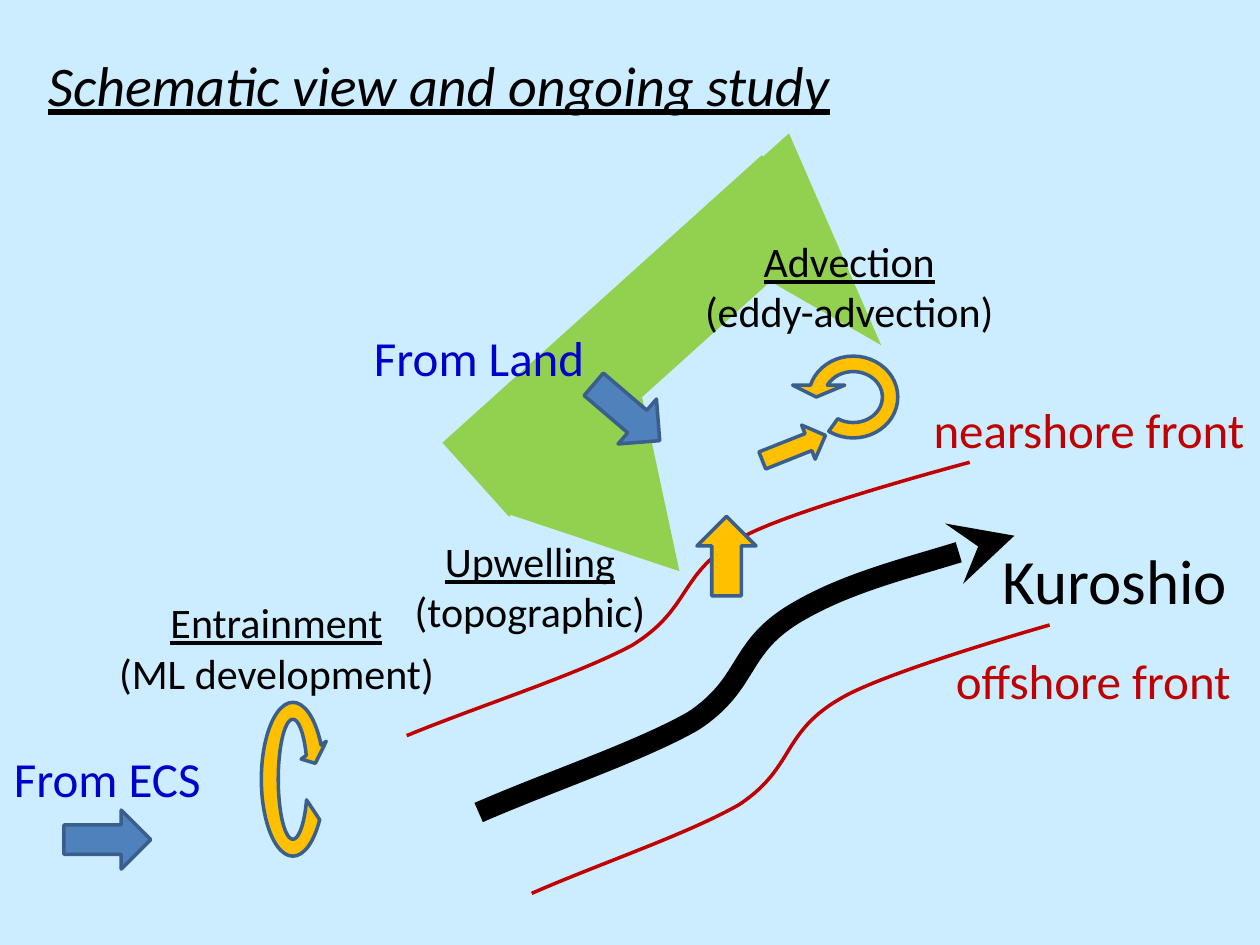
"""Build a slide with a schematic view of the Kuroshio and its nutrient sources."""
import pptx
import pptx.dml.color
import pptx.enum.shapes
import pptx.enum.text
import pptx.oxml.ns
import pptx.oxml.xmlchemy
import pptx.util
from pptx.util import Cm

KIND = pptx.enum.shapes.MSO_SHAPE
ALIGN = pptx.enum.text.PP_ALIGN
BLACK, RED, BLUE = "000000", "C00000", "0000CC"
GREEN, GOLD, STEEL, OUTLINE = "92D050", "FFC000", "4F81BD", "3A5F8C"

TITLE = "Schematic view and ongoing study"
TITLE_BOX = (0.71, 0.89, 16.46, 1.63)

FLOW = [(0, 0), (0.13, 0.11), (0.3, 0.22), (0.4, 0.33), (0.51, 0.47),
        (0.48, 0.6), (0.6, 0.73), (0.69, 0.83), (1, 1), (1, 1)]
CURRENTS = [
    ((8.2, 9.32, 11.35, 5.51), RED, 2, None),
    ((10.72, 12.6, 10.44, 5.41), RED, 2, None),
    ((9.65, 10.8, 10.8, 5.58), BLACK, 12, "stealth"),
]

COAST = [
    (KIND.ISOSCELES_TRIANGLE, (10.82, 8.74, 3.63, 3.18), 138.2),
    (KIND.RECTANGLE, (8.48, 5.77, 8.66, 2.01), 318),
    (KIND.ISOSCELES_TRIANGLE, (14.83, 3.1, 2.92, 4.42), 138.2),
]

ARROWS = [
    (KIND.DOWN_ARROW, (14.05, 10.41, 1.19, 1.6), 180, GOLD),
    (KIND.RIGHT_ARROW, (15.32, 8.66, 1.37, 0.74), 338.3, GOLD),
    (KIND.DOWN_ARROW, (12.04, 7.44, 1.19, 1.75), 310.5, STEEL),
    (KIND.DOWN_ARROW, (1.57, 16.05, 1.19, 1.75), 270, STEEL),
]
EDDIES = [
    ((5.13, 14.02, 1.55, 3.38), (0.22, 11.42, 183.39, 33.87, 0.2), False),
    ((15.93, 6.81, 2.54, 2.39), (0.13, 11.42, 204.58, 32.73, 0.22), True),
]

NAMES = [
    ("Kuroshio", (19.96, 10.8, 5.08, 1.8), 36, BLACK),
    ("nearshore front", (18.57, 7.92, 6.86, 1.45), 28, RED),
    ("offshore front", (19.02, 12.98, 6.12, 1.45), 28, RED),
    ("From ECS", (0.03, 14.96, 4.32, 1.45), 28, BLUE),
    ("From Land", (7.29, 6.48, 4.8, 1.45), 28, BLUE),
]
PROCESSES = [
    ("Entrainment", "(ML development)", (2.11, 11.91, 6.93, 2.31)),
    ("Upwelling", "(topographic)", (8.08, 10.67, 5.21, 2.31)),
    ("Advection", "(eddy-advection)", (13.92, 4.62, 6.4, 2.31)),
]


def paint(color_format, color):
    color_format.rgb = pptx.dml.color.RGBColor.from_string(color)


def write(holder, *lines, size, color=BLACK, align=ALIGN.LEFT, italic=False, underline_first=False):
    frame = holder.text_frame
    frame.text = "\n".join(lines)
    frame.word_wrap = False
    frame.auto_size = pptx.enum.text.MSO_AUTO_SIZE.SHAPE_TO_FIT_TEXT
    frame.vertical_anchor = pptx.enum.text.MSO_ANCHOR.TOP
    for position, paragraph in enumerate(frame.paragraphs):
        paragraph.alignment = align
        font = paragraph.runs[0].font
        font.name, font.size, font.italic = "Calibri", pptx.util.Pt(size), italic
        font.underline = underline_first and position == 0
        paint(font.color, color)


def add_label(slide, box, *lines, **style):
    write(slide.shapes.add_textbox(*map(Cm, box)), *lines, **style)


def add_block(slide, kind, box, fill, rotation=0, outline=None):
    block = slide.shapes.add_shape(kind, *map(Cm, box))
    block.shadow.inherit = False
    block.rotation = rotation
    block.fill.solid()
    paint(block.fill.fore_color, fill)
    if outline:
        paint(block.line.color, outline)
        block.line.width = pptx.util.Pt(2)
    else:
        block.line.fill.background()
    return block


def add_current(slide, box, color, width, head):
    left, top, across, rise = box
    points = [(Cm(left + x * across), Cm(top + (1 - y) * rise)) for x, y in FLOW]
    builder = slide.shapes.build_freeform(*points[0])
    builder.add_line_segments(points[1:], close=False)
    current = builder.convert_to_shape()
    current.shadow.inherit = False
    current.fill.background()
    paint(current.line.color, color)
    current.line.width = pptx.util.Pt(width)

    qn = pptx.oxml.ns.qn
    new_element = pptx.oxml.xmlchemy.OxmlElement
    route = current.element.find(".//" + qn("a:path"))
    steps = route.findall(qn("a:lnTo"))
    for start in range(0, len(steps), 3):
        bend = new_element("a:cubicBezTo")
        for step in steps[start:start + 3]:
            bend.append(step[0])
            route.remove(step)
        route.append(bend)
    if head:
        tip = new_element("a:tailEnd")
        tip.set("type", head)
        current.element.spPr.find(qn("a:ln")).append(tip)


def main():
    deck = pptx.Presentation()
    deck.slide_width, deck.slide_height = Cm(25.4), Cm(19.05)
    slide = deck.slides.add_slide(deck.slide_layouts[5])
    slide.background.fill.solid()
    paint(slide.background.fill.fore_color, "CCECFF")

    title = slide.shapes.title
    title.left, title.top, title.width, title.height = map(Cm, TITLE_BOX)
    write(title, TITLE, size=32, italic=True, underline_first=True)

    for current in CURRENTS:
        add_current(slide, *current)
    for kind, box, rotation in COAST:
        add_block(slide, kind, box, GREEN, rotation)
    for name, box, size, color in NAMES:
        add_label(slide, box, name, size=size, color=color)
    for process, cause, box in PROCESSES:
        add_label(slide, box, process, cause, size=24, align=ALIGN.CENTER, underline_first=True)
    for kind, box, rotation, fill in ARROWS:
        add_block(slide, kind, box, fill, rotation, OUTLINE)
    for box, bends, mirrored in EDDIES:
        eddy = add_block(slide, KIND.CIRCULAR_ARROW, box, GOLD, outline=OUTLINE)
        for position, bend in enumerate(bends):
            eddy.adjustments[position] = bend
        if mirrored:
            eddy.element.spPr.xfrm.set("flipH", "1")

    deck.save("out.pptx")


if __name__ == "__main__":
    main()
